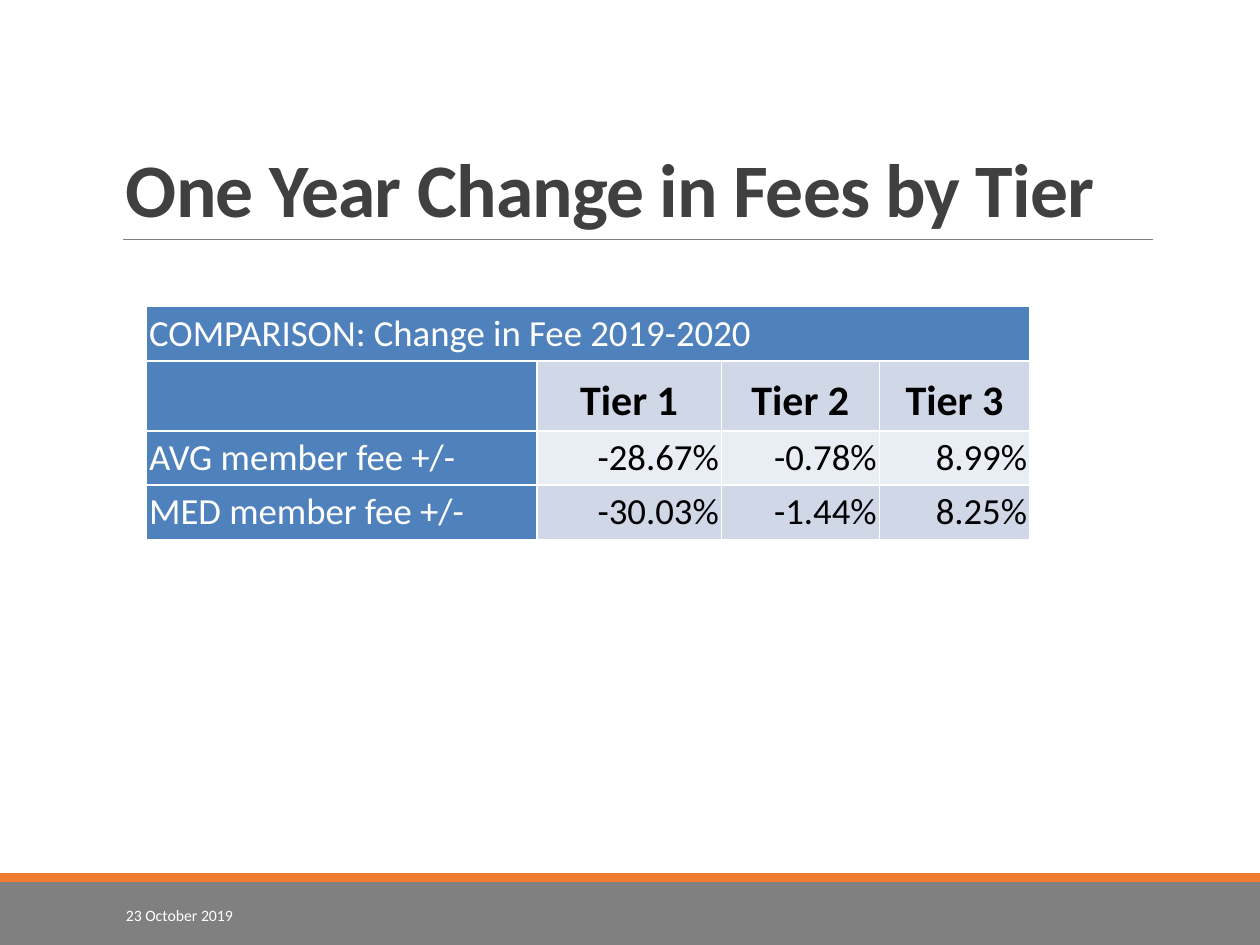
from lxml import etree
from pptx import Presentation
from pptx.dml.color import RGBColor
from pptx.enum.shapes import MSO_CONNECTOR, MSO_SHAPE
from pptx.enum.text import MSO_ANCHOR, PP_ALIGN
from pptx.oxml.ns import qn
from pptx.util import Pt

LEFT, CENTER, RIGHT = PP_ALIGN.LEFT, PP_ALIGN.CENTER, PP_ALIGN.RIGHT
BOTTOM, MIDDLE = MSO_ANCHOR.BOTTOM, MSO_ANCHOR.MIDDLE
RECTANGLE, STRAIGHT = MSO_SHAPE.RECTANGLE, MSO_CONNECTOR.STRAIGHT

FONT = "Calibri"
WHITE = RGBColor(0xFF, 0xFF, 0xFF)
BLACK = RGBColor(0x00, 0x00, 0x00)
CHARCOAL = RGBColor(0x40, 0x40, 0x40)
GRAY = RGBColor(0x80, 0x80, 0x80)
ORANGE = RGBColor(0xEF, 0x7C, 0x2F)
BLUE = RGBColor(0x4F, 0x81, 0xBD)
BAND_DARK = RGBColor(0xD0, 0xD8, 0xE8)
BAND_LIGHT = RGBColor(0xE9, 0xED, 0xF4)

COLUMN_WIDTHS = [223, 105.5, 90.25, 86]
ROW_HEIGHTS = [31, 40, 31, 31]
FEE_ROWS = [
    ["COMPARISON: Change in Fee 2019-2020", "", "", ""],
    ["", "Tier 1", "Tier 2", "Tier 3"],
    ["AVG member fee +/-", "-28.67%", "-0.78%", "8.99%"],
    ["MED member fee +/-", "-30.03%", "-1.44%", "8.25%"],
]
BAND_FILLS = [BLUE, BAND_DARK, BAND_LIGHT, BAND_DARK]


def write_text(frame, text, size, color, bold=False, align=LEFT,
               line_spacing=None, tracking=None):
    paragraph = frame.paragraphs[0]
    paragraph.alignment = align
    if line_spacing:
        paragraph.line_spacing = line_spacing
    run = paragraph.add_run()
    run.text = text
    run.font.name = FONT
    run.font.size = Pt(size)
    run.font.bold = bold
    run.font.color.rgb = color
    if tracking:
        run.font._element.set("spc", str(round(tracking * 100)))


def add_label(slide, left, top, width, height, text, anchor, **text_format):
    label = slide.shapes.add_textbox(Pt(left), Pt(top), Pt(width), Pt(height))
    label.text_frame.word_wrap = True
    label.text_frame.vertical_anchor = anchor
    write_text(label.text_frame, text, **text_format)


def add_band(slide, top, height, color):
    band = slide.shapes.add_shape(RECTANGLE, 0, Pt(top), Pt(720), Pt(height))
    band.shadow.inherit = False
    band.fill.solid()
    band.fill.fore_color.rgb = color
    band.line.fill.background()


def add_rule(slide, left, right, y):
    rule = slide.shapes.add_connector(STRAIGHT, Pt(left), Pt(y), Pt(right), Pt(y))
    rule.line.color.rgb = GRAY
    rule.line.width = Pt(0.5)
    etree.SubElement(rule._element.spPr, qn("a:effectLst"))


def style_cell(cell, fill):
    cell.margin_left = cell.margin_right = Pt(1.5)
    cell.margin_top = cell.margin_bottom = Pt(2.6)
    cell.vertical_anchor = BOTTOM
    # Borders must come before the fill in the cell properties
    properties = cell._tc.get_or_add_tcPr()
    for side in ("a:lnL", "a:lnR", "a:lnT", "a:lnB"):
        border = etree.SubElement(properties, qn(side), w=str(Pt(1)))
        solid = etree.SubElement(border, qn("a:solidFill"))
        etree.SubElement(solid, qn("a:srgbClr"), val=str(WHITE))
    cell.fill.solid()
    cell.fill.fore_color.rgb = fill


def add_fee_table(slide, left, top):
    frame = slide.shapes.add_table(
        len(ROW_HEIGHTS), len(COLUMN_WIDTHS), Pt(left), Pt(top),
        Pt(sum(COLUMN_WIDTHS)), Pt(sum(ROW_HEIGHTS)))
    table = frame.table
    table.first_row = table.horz_banding = False
    for column, width in zip(table.columns, COLUMN_WIDTHS):
        column.width = Pt(width)
    for row, height in zip(table.rows, ROW_HEIGHTS):
        row.height = Pt(height)
    table.cell(0, 0).merge(table.cell(0, len(COLUMN_WIDTHS) - 1))

    for r, values in enumerate(FEE_ROWS):
        for c, value in enumerate(values):
            cell = table.cell(r, c)
            style_cell(cell, BLUE if c == 0 else BAND_FILLS[r])
            if not value:
                continue
            if c == 0:
                text_format = dict(size=21, color=WHITE)
            elif r == 1:
                text_format = dict(size=24, color=BLACK, bold=True, align=CENTER)
            else:
                text_format = dict(size=21, color=BLACK, align=RIGHT)
            write_text(cell.text_frame, value, **text_format)


def main():
    presentation = Presentation()
    presentation.slide_width, presentation.slide_height = Pt(720), Pt(540)
    slide = presentation.slides.add_slide(presentation.slide_layouts[6])

    # Footer bands and title rule
    add_band(slide, 504, 36, GRAY)
    add_band(slide, 499, 5, ORANGE)
    add_rule(slide, 70.5, 659, 136.8)

    # Title
    add_label(slide, 64.8, 22.3, 594, 114.5, "One Year Change in Fees by Tier",
              BOTTOM, size=43.2, color=CHARCOAL, bold=True,
              line_spacing=0.85, tracking=-0.5)

    # Fee comparison
    add_fee_table(slide, 83.75, 175.25)

    # Date
    add_label(slide, 64.8, 508.6, 146, 28.75, "23 October 2019",
              MIDDLE, size=9, color=WHITE)

    presentation.save("out.pptx")


if __name__ == "__main__":
    main()
